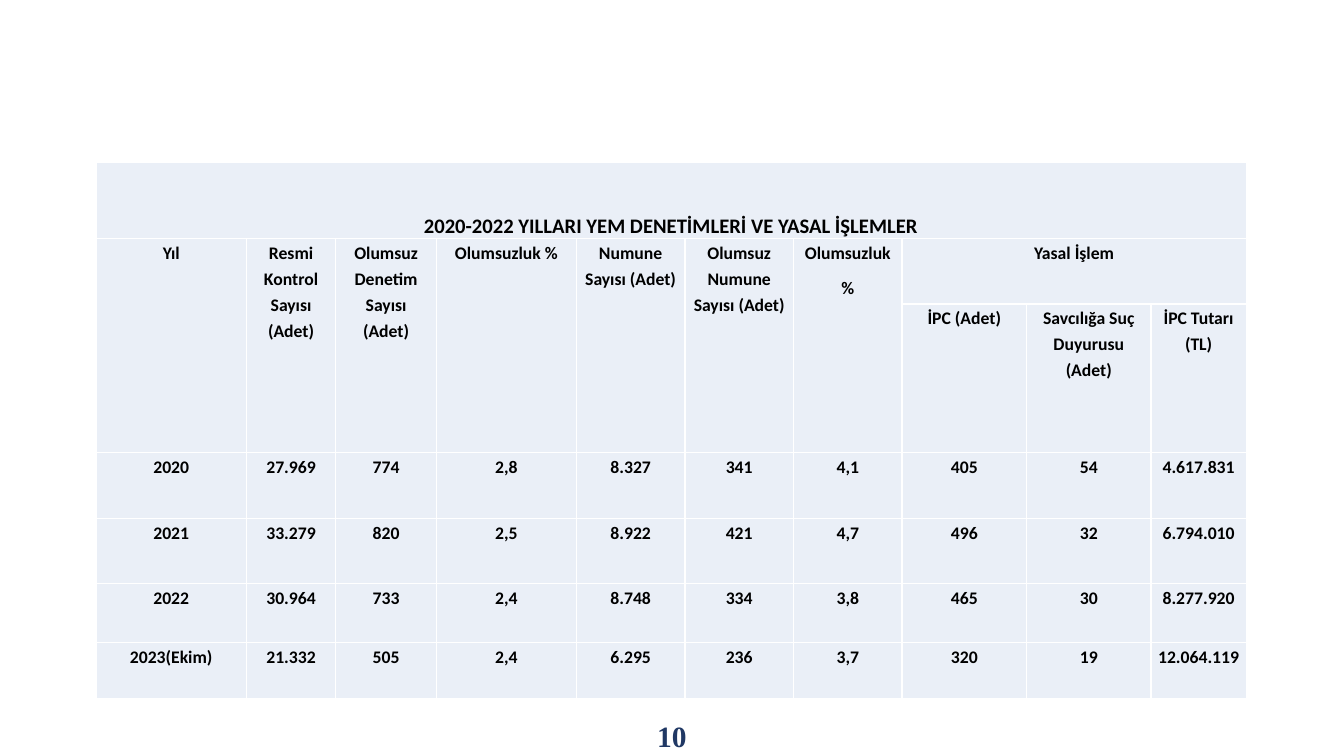
from lxml import etree
from pptx import Presentation
from pptx.dml.color import RGBColor
from pptx.enum.text import MSO_ANCHOR, PP_ALIGN
from pptx.oxml.ns import qn
from pptx.util import Cm, Pt

CENTER = PP_ALIGN.CENTER
TOP, MIDDLE, BOTTOM = MSO_ANCHOR.TOP, MSO_ANCHOR.MIDDLE, MSO_ANCHOR.BOTTOM
BLACK = RGBColor(0x00, 0x00, 0x00)
WHITE = RGBColor(0xFF, 0xFF, 0xFF)
PALE_BLUE = RGBColor(0xEA, 0xEF, 0xF7)
NAVY = RGBColor(0x20, 0x38, 0x64)

COL_WIDTHS = [3.6, 2.14, 2.41, 3.35, 2.6, 2.6, 2.6, 2.98, 2.98, 2.28]
ROW_HEIGHTS = [1.82, 1.56, 3.56, 1.58, 1.56, 1.41, 1.34]
ROWS = [
    ["2020-2022 YILLARI YEM DENETİMLERİ VE YASAL İŞLEMLER"],
    ["Yıl", "Resmi Kontrol Sayısı (Adet)", "Olumsuz Denetim Sayısı (Adet)",
     "Olumsuzluk %", "Numune Sayısı (Adet)", "Olumsuz Numune Sayısı (Adet)",
     "Olumsuzluk\n%", "Yasal İşlem"],
    [""] * 7 + ["İPC (Adet)", "Savcılığa Suç Duyurusu (Adet)", "İPC Tutarı (TL)"],
    ["2020", "27.969", "774", "2,8", "8.327", "341", "4,1", "405", "54", "4.617.831"],
    ["2021", "33.279", "820", "2,5", "8.922", "421", "4,7", "496", "32", "6.794.010"],
    ["2022", "30.964", "733", "2,4", "8.748", "334", "3,8", "465", "30", "8.277.920"],
    ["2023(Ekim)", "21.332", "505", "2,4", "6.295", "236", "3,7", "320", "19", "12.064.119"],
]


def format_paragraph(p, font_name, size, color):
    p.alignment = CENTER
    for r in p.runs:
        r.font.name = font_name
        r.font.size = Pt(size)
        r.font.bold = True
        r.font.color.rgb = color


def add_borders(cell):
    tc_pr = cell._tc.get_or_add_tcPr()
    for side in ("lnL", "lnR", "lnT", "lnB"):
        ln = etree.SubElement(tc_pr, qn(f"a:{side}"), w=str(Pt(1)))
        solid = etree.SubElement(ln, qn("a:solidFill"))
        etree.SubElement(solid, qn("a:srgbClr"), val=str(WHITE))


prs = Presentation()
prs.slide_width = Cm(32.18)
prs.slide_height = Cm(18.11)
s = prs.slides.add_slide(prs.slide_layouts[6])

table = s.shapes.add_table(
    len(ROWS), len(COL_WIDTHS), Cm(2.3), Cm(3.9),
    Cm(sum(COL_WIDTHS)), Cm(sum(ROW_HEIGHTS))).table
table.first_row = False
table.horz_banding = False
for column, width in zip(table.columns, COL_WIDTHS):
    column.width = Cm(width)
for row, height in zip(table.rows, ROW_HEIGHTS):
    row.height = Cm(height)

table.cell(0, 0).merge(table.cell(0, 9))
table.cell(1, 7).merge(table.cell(1, 9))
for col in range(7):
    table.cell(1, col).merge(table.cell(2, col))

for cell in table.iter_cells():
    add_borders(cell)
    cell.fill.solid()
    cell.fill.fore_color.rgb = PALE_BLUE
    cell.margin_left = cell.margin_right = Cm(0.13)
    cell.margin_top = cell.margin_bottom = Cm(0)

for row, texts in enumerate(ROWS):
    for col, text in enumerate(texts):
        cell = table.cell(row, col)
        if cell.is_spanned:
            continue
        cell.text_frame.text = text
        cell.vertical_anchor = TOP if row else BOTTOM
        for i, p in enumerate(cell.text_frame.paragraphs):
            p.line_spacing = 1.2
            p.space_before = Pt(6 if i else 0)
            format_paragraph(p, "Calibri", 12 if row else 14, BLACK)

sp = s.shapes.add_textbox(Cm(12.47), Cm(17.15), Cm(7.24), Cm(0.96))
tf = sp.text_frame
tf.word_wrap = True
tf.vertical_anchor = MIDDLE
tf.text = "10"
format_paragraph(tf.paragraphs[0], "Times New Roman", 20, NAVY)

prs.save("out.pptx")
